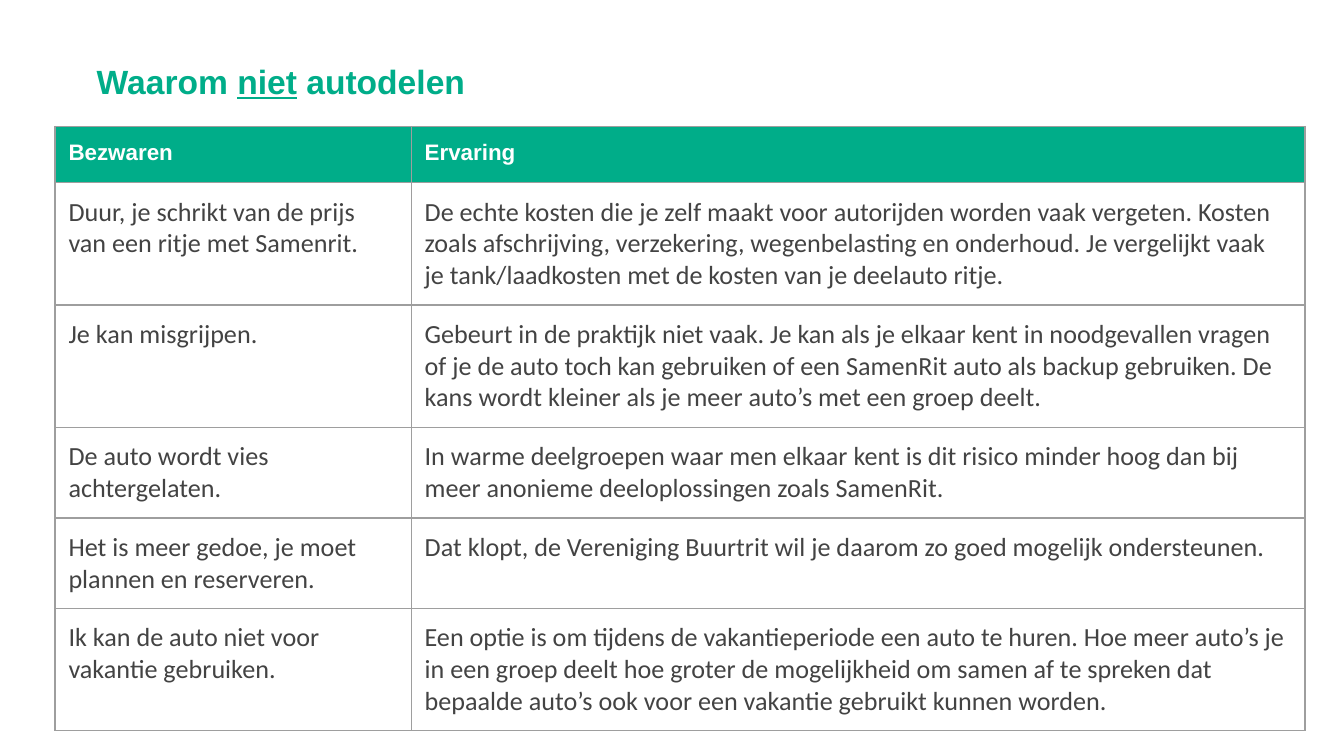
from lxml import etree
from pptx import Presentation
from pptx import util as u
from pptx.dml.color import RGBColor
from pptx.enum import text
from pptx.oxml import ns

GREEN = RGBColor(0x00, 0xAD, 0x89)
WHITE = RGBColor(0xFF, 0xFF, 0xFF)
DARK = RGBColor(0x43, 0x43, 0x43)
GREY = RGBColor(0x9E, 0x9E, 0x9E)
SLIDE_W = u.Inches(10)
SLIDE_H = SLIDE_W * 9 // 16
PADDING = u.Inches(0.1)
COLUMN_WIDTHS = (u.Inches(2.65), u.Inches(6.65))
ROW_HEIGHTS = [u.Inches(height) for height in (0.42, 0.42, 0.42, 0.59, 0.42, 0.42)]

ROWS = (
    ("Bezwaren", "Ervaring"),
    ("Duur, je schrikt van de prijs van een ritje met Samenrit.",
     "De echte kosten die je zelf maakt voor autorijden worden vaak vergeten. "
     "Kosten zoals afschrijving, verzekering, wegenbelasting en onderhoud. "
     "Je vergelijkt vaak je tank/laadkosten met de kosten van je deelauto ritje."),
    ("Je kan misgrijpen.",
     "Gebeurt in de praktijk niet vaak. Je kan als je elkaar kent in noodgevallen "
     "vragen of je de auto toch kan gebruiken of een SamenRit auto als backup "
     "gebruiken. De kans wordt kleiner als je meer auto’s met een groep deelt."),
    ("De auto wordt vies achtergelaten.",
     "In warme deelgroepen waar men elkaar kent is dit risico minder hoog dan bij "
     "meer anonieme deeloplossingen zoals SamenRit."),
    ("Het is meer gedoe, je moet plannen en reserveren.",
     "Dat klopt, de Vereniging Buurtrit wil je daarom zo goed mogelijk ondersteunen."),
    ("Ik kan de auto niet voor vakantie gebruiken.",
     "Een optie is om tijdens de vakantieperiode een auto te huren. Hoe meer auto’s "
     "je in een groep deelt hoe groter de mogelijkheid om samen af te spreken dat "
     "bepaalde auto’s ook voor een vakantie gebruikt kunnen worden."),
)


def add_run(paragraph, wording, face, size, colour, bold=False, underline=False):
    """Add one formatted run to a paragraph."""
    run = paragraph.add_run()
    run.text = wording
    font = run.font
    font.name, font.size, font.bold, font.underline = face, u.Pt(size), bold, underline
    font.color.rgb = colour


def place_title(slide, left, top, width, height):
    """Place the title with its underlined word in the given box."""
    title = slide.shapes.title
    title.left, title.top, title.width, title.height = left, top, width, height
    frame = title.text_frame
    frame.word_wrap = True
    frame.auto_size = text.MSO_AUTO_SIZE.NONE
    frame.vertical_anchor = text.MSO_ANCHOR.TOP
    frame.margin_left = frame.margin_right = PADDING
    frame.margin_top = frame.margin_bottom = PADDING
    heading = frame.paragraphs[0]
    heading.alignment = text.PP_ALIGN.LEFT
    for wording, underline in ((" Waarom ", False), ("niet", True), (" autodelen", False)):
        add_run(heading, wording, "Arial", 18, GREEN, True, underline)


def outline_cell(cell):
    """Draw a thin grey border on all four sides of a cell."""
    properties = cell._tc.get_or_add_tcPr()
    for side in ("a:lnL", "a:lnR", "a:lnT", "a:lnB"):
        border = etree.SubElement(properties, ns.qn(side), w=str(u.Pt(0.75)))
        solid = etree.SubElement(border, ns.qn("a:solidFill"))
        etree.SubElement(solid, ns.qn("a:srgbClr"), val=str(GREY))


def fill_cell(cell, wording, is_heading):
    """Write and format one table cell."""
    outline_cell(cell)
    cell.margin_left = cell.margin_right = PADDING
    cell.margin_top = cell.margin_bottom = PADDING
    cell.vertical_anchor = text.MSO_ANCHOR.TOP
    paragraph = cell.text_frame.paragraphs[0]
    if is_heading:
        cell.fill.solid()
        cell.fill.fore_color.rgb = GREEN
        add_run(paragraph, wording, "Arial", 12, WHITE, bold=True)
    else:
        cell.fill.background()
        add_run(paragraph, wording, "Calibri", 14, DARK)


def place_objections(slide, left, top):
    """Place the table of objections, whose rows grow with their text."""
    objections = slide.shapes.add_table(
        len(ROWS), len(COLUMN_WIDTHS), left, top,
        sum(COLUMN_WIDTHS), sum(ROW_HEIGHTS)).table
    objections.first_row = objections.horz_banding = False
    for column, width in zip(objections.columns, COLUMN_WIDTHS):
        column.width = width
    for index, (row, height, wordings) in enumerate(
            zip(objections.rows, ROW_HEIGHTS, ROWS)):
        row.height = height
        for cell, wording in zip(row.cells, wordings):
            fill_cell(cell, wording, index == 0)


def main():
    """Build and save the slide."""
    deck = Presentation()
    deck.slide_width, deck.slide_height = SLIDE_W, SLIDE_H
    slide = deck.slides.add_slide(deck.slide_layouts.get_by_name("Title Only"))
    place_title(slide, u.Inches(0.55), u.Inches(0.35), u.Inches(7.19), u.Inches(0.5))
    place_objections(slide, u.Inches(0.41), u.Inches(0.94))
    deck.save("out.pptx")


if __name__ == "__main__":
    main()
